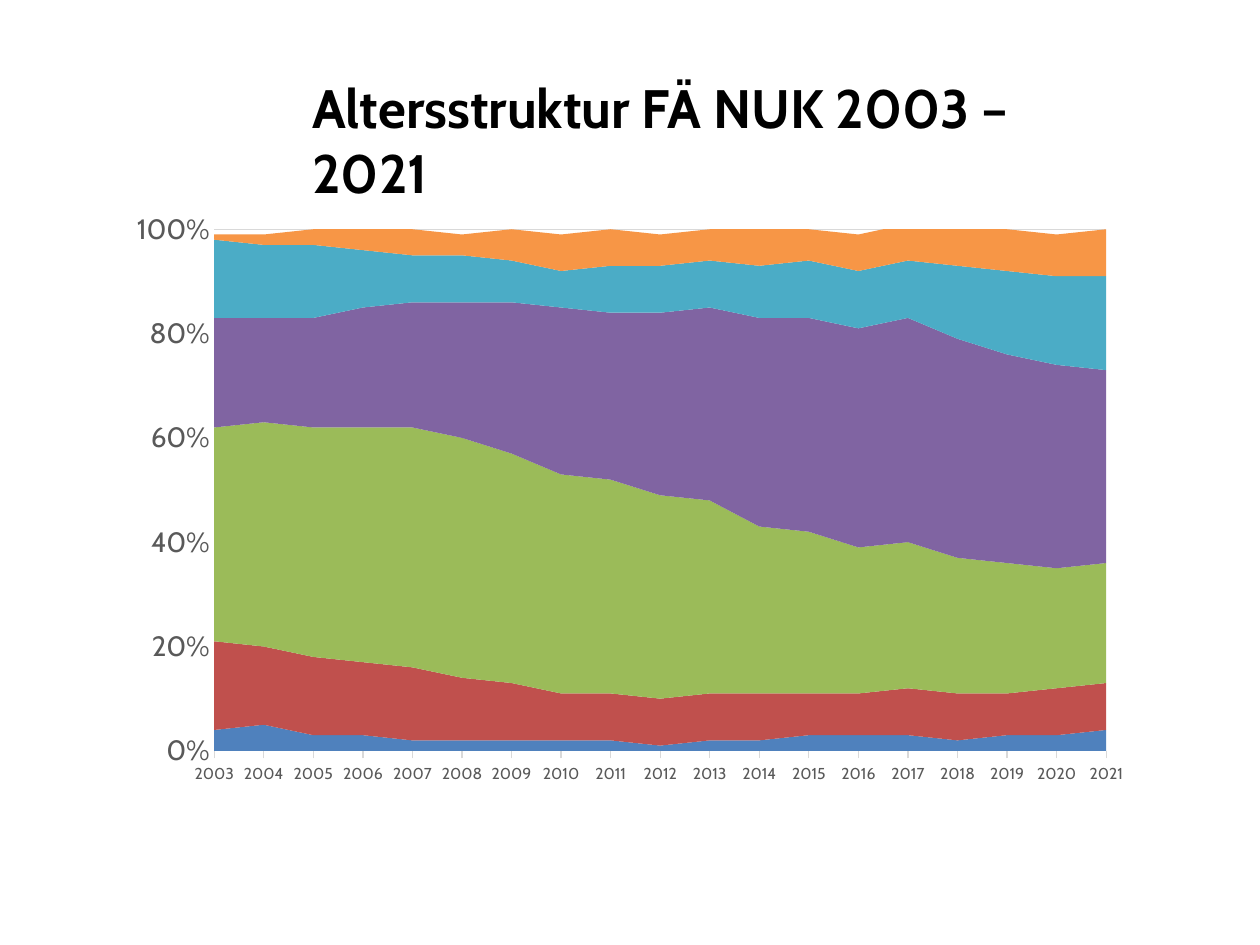
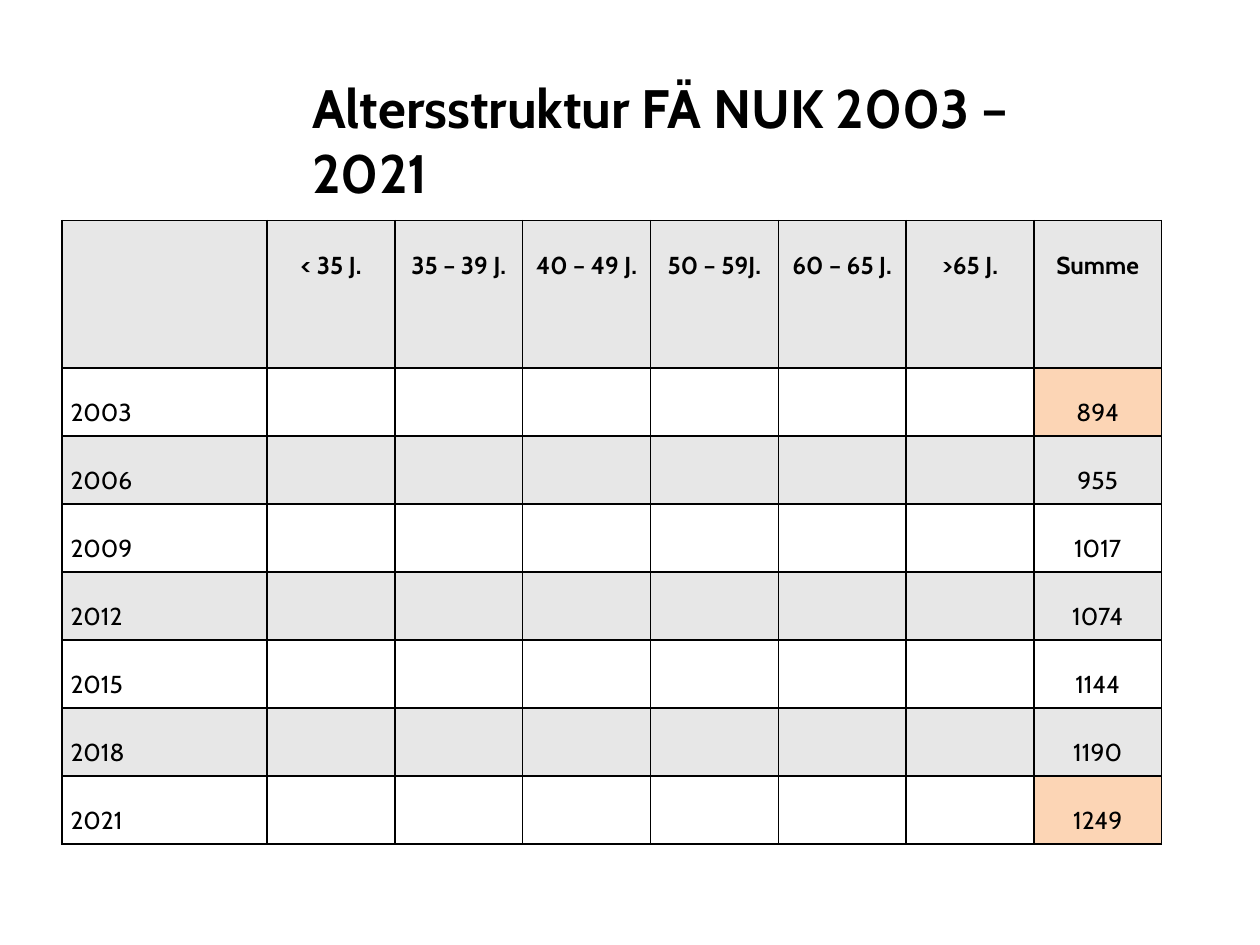
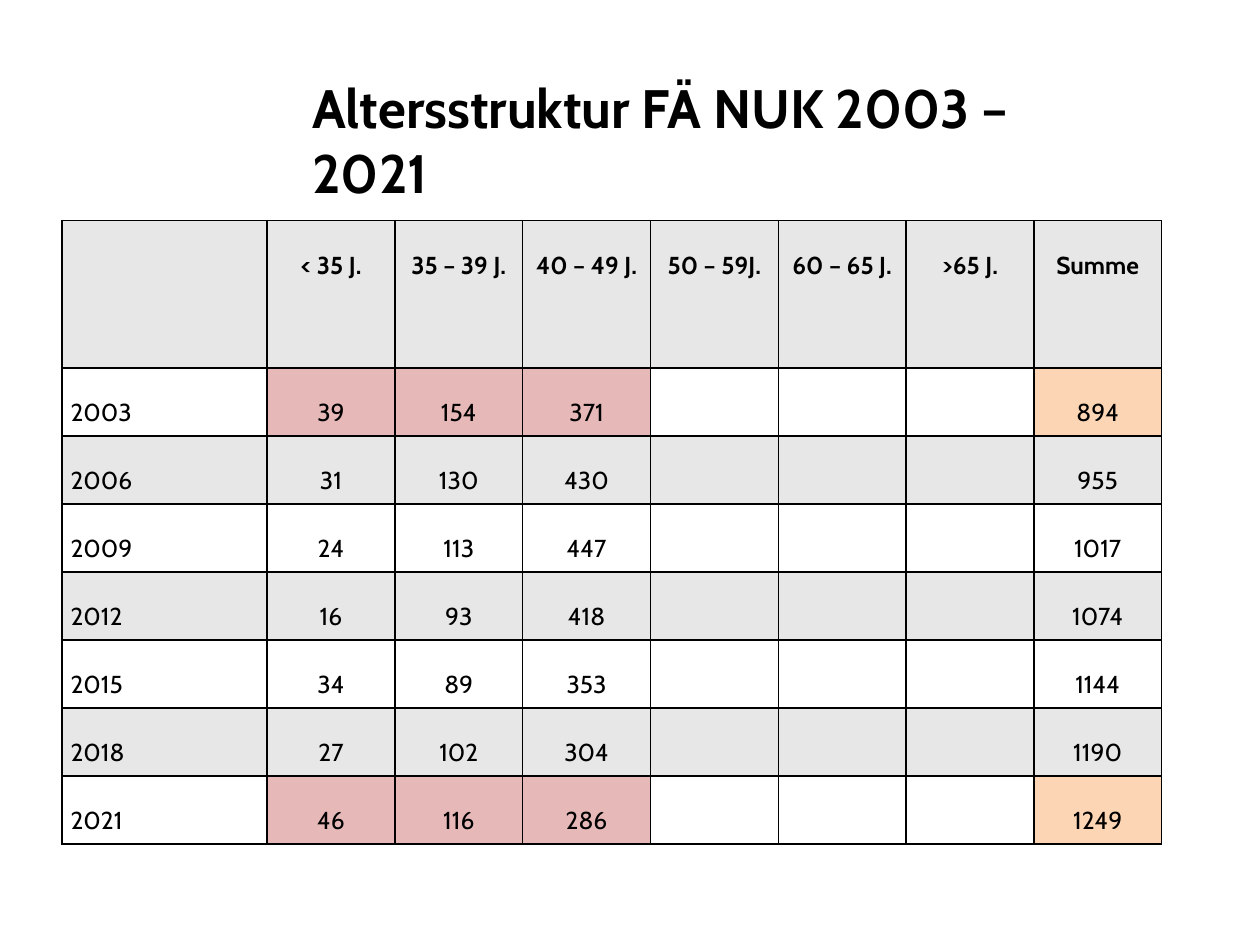
from lxml import etree
from pptx import Presentation
from pptx.chart.data import CategoryChartData
from pptx.dml.color import RGBColor
from pptx.enum.chart import XL_CHART_TYPE, XL_TICK_MARK
from pptx.enum.text import MSO_ANCHOR, MSO_AUTO_SIZE, PP_ALIGN
from pptx.oxml import parse_xml
from pptx.oxml.ns import nsdecls, qn
from pptx.util import Inches, Pt

AREA_STACKED = XL_CHART_TYPE.AREA_STACKED
TICK_NONE, TICK_OUT = XL_TICK_MARK.NONE, XL_TICK_MARK.OUTSIDE
TOP = MSO_ANCHOR.TOP
GROW = MSO_AUTO_SIZE.SHAPE_TO_FIT_TEXT
LEFT, CENTER = PP_ALIGN.LEFT, PP_ALIGN.CENTER

FONT = "Cabin"
TITLE = "Altersstruktur FÄ NUK 2003 – 2021"
COLORS = {
    "text": "000000", "axis": "595959", "grid": "D9D9D9", "white": "FFFFFF",
    "band": "E7E7E7", "young": "E6B9B8", "total": "FCD5B5",
}
AREA_COLORS = ["4F81BD", "C0504D", "9BBB59", "8064A2", "4BACC6", "F79646"]

YEARS = range(2003, 2022)
SHARES = [
    [4, 5, 3, 3, 2, 2, 2, 2, 2, 1, 2, 2, 3, 3, 3, 2, 3, 3, 4],
    [17, 15, 15, 14, 14, 12, 11, 9, 9, 9, 9, 9, 8, 8, 9, 9, 8, 9, 9],
    [41, 43, 44, 45, 46, 46, 44, 42, 41, 39, 37, 32, 31, 28, 28, 26, 25, 23, 23],
    [21, 20, 21, 23, 24, 26, 29, 32, 32, 35, 37, 40, 41, 42, 43, 42, 40, 39, 37],
    [15, 14, 14, 11, 9, 9, 8, 7, 9, 9, 9, 10, 11, 11, 11, 14, 16, 17, 18],
    [1, 2, 3, 4, 5, 4, 6, 7, 7, 6, 6, 7, 6, 7, 7, 7, 8, 8, 9],
]
CHART_BOX = (0.93, 1.6, 8.15, 4.72)
PLOT_BOX = (1.7, 1.82, 7.08, 4.14)

AGE_GROUPS = ["< 35 J.", "35 – 39 J.", "40 – 49 J.", "50 – 59J.", "60 – 65 J.", ">65 J."]
HEADER = ["", *AGE_GROUPS, "Summe"]
COUNTS = {
    2003: ([39, 154, 371], 894),
    2006: ([31, 130, 430], 955),
    2009: ([24, 113, 447], 1017),
    2012: ([16, 93, 418], 1074),
    2015: ([34, 89, 353], 1144),
    2018: ([27, 102, 304], 1190),
    2021: ([46, 116, 286], 1249),
}
COMPARED_YEARS = (min(COUNTS), max(COUNTS))
TABLE_BOX = (0.49, 1.75, 8.73, 4.96)
YEAR_WIDTH, HEADER_HEIGHT, ROW_HEIGHT = 1.63, 1.17, 0.54


def rgb(name):
    """Return the palette colour of that name."""
    return RGBColor.from_string(COLORS[name])


def set_attrs(target, values):
    """Set each named attribute on the target."""
    for name, value in values.items():
        setattr(target, name, value)


def format_font(font, size, color="text", bold=False):
    """Give a font the deck's typeface with a size, colour and weight."""
    set_attrs(font, {"name": FONT, "size": Pt(size), "bold": bold})
    font.color.rgb = rgb(color)


def add_titled_slide(prs):
    """Add a slide with the shared title."""
    s = prs.slides.add_slide(prs.slide_layouts[5])
    title = s.shapes.title
    set_attrs(title, {"left": Inches(2.38), "top": Inches(0.54),
                      "width": Inches(6.56), "height": Inches(0.62)})
    tf = title.text_frame
    set_attrs(tf, {"text": TITLE, "word_wrap": True, "auto_size": GROW,
                   "vertical_anchor": TOP})
    p = tf.paragraphs[0]
    p.alignment = LEFT
    format_font(p.runs[0].font, 30.9, bold=True)
    return s


def set_plot_area(chart):
    """Place the inner plot area within the chart frame."""
    x, y, w, h = CHART_BOX
    left, top, width, height = PLOT_BOX
    plot_area = chart.element.find(".//" + qn("c:plotArea"))
    for old in plot_area.findall(qn("c:layout")):
        plot_area.remove(old)
    layout = parse_xml(f"<c:layout {nsdecls('c')}><c:manualLayout/></c:layout>")
    values = {
        "layoutTarget": "inner", "xMode": "edge", "yMode": "edge",
        "x": (left - x) / w, "y": (top - y) / h, "w": width / w, "h": height / h,
    }
    for tag, value in values.items():
        etree.SubElement(layout[0], qn(f"c:{tag}")).set("val", str(value))
    plot_area.insert(0, layout)


def format_line(line, color, width):
    """Give a line a colour and a width."""
    line.color.rgb = rgb(color)
    line.width = Pt(width)


def add_share_chart(s):
    """Add the stacked area chart of age shares by year."""
    data = CategoryChartData(number_format="0%")
    data.categories = [str(year) for year in YEARS]
    for number, shares in enumerate(SHARES, 1):
        data.add_series(f"Series {number}", [share / 100 for share in shares])
    frame = s.shapes.add_chart(AREA_STACKED, *map(Inches, CHART_BOX), data)
    chart = frame.chart
    set_attrs(chart, {"has_legend": False, "has_title": False})
    format_font(chart.font, 16)
    plot = chart.plots[0]
    plot.vary_by_categories = False
    for series, color in zip(plot.series, AREA_COLORS):
        series.format.fill.solid()
        series.format.fill.fore_color.rgb = RGBColor.from_string(color)
        series.format.line.fill.background()

    years, shares = chart.category_axis, chart.value_axis
    set_attrs(years, {"major_tick_mark": TICK_OUT, "minor_tick_mark": TICK_NONE,
                      "has_major_gridlines": False})
    set_attrs(shares, {"major_tick_mark": TICK_NONE, "minor_tick_mark": TICK_NONE,
                       "minimum_scale": 0, "maximum_scale": 1, "major_unit": 0.2,
                       "has_major_gridlines": True})
    set_attrs(shares.tick_labels, {"number_format": "0%", "number_format_is_linked": False})
    format_font(years.tick_labels.font, 9, "axis")
    format_font(shares.tick_labels.font, 16, "axis")
    format_line(years.format.line, "grid", 0.75)
    format_line(shares.major_gridlines.format.line, "grid", 0.75)
    shares.format.line.fill.background()
    set_plot_area(chart)


def add_borders(cell):
    """Draw a thin line on all four sides of a cell."""
    tc_pr = cell._tc.get_or_add_tcPr()
    for side in ("lnL", "lnR", "lnT", "lnB"):
        tc_pr.append(parse_xml(
            f'<a:{side} {nsdecls("a")} w="{Pt(1)}"><a:solidFill>'
            f'<a:srgbClr val="{COLORS["text"]}"/></a:solidFill></a:{side}>'))


def format_cell(cell, text, fill, alignment=CENTER, bold=False):
    """Fill, frame and label one table cell."""
    set_attrs(cell, {"margin_left": Inches(0.07), "margin_right": Inches(0.07),
                     "margin_top": 0, "margin_bottom": 0, "vertical_anchor": TOP})
    add_borders(cell)
    cell.fill.solid()
    cell.fill.fore_color.rgb = rgb(fill)
    if text:
        p = cell.text_frame.paragraphs[0]
        set_attrs(p, {"alignment": alignment, "line_spacing": 2.0})
        r = p.add_run()
        r.text = text
        format_font(r.font, 14, bold=bold)


def add_count_table(s, shown):
    """Add the table of counts with the first age groups filled in."""
    columns = len(HEADER)
    table = s.shapes.add_table(len(COUNTS) + 1, columns, *map(Inches, TABLE_BOX)).table
    set_attrs(table, {"first_row": False, "horz_banding": False})
    group_width = (TABLE_BOX[2] - YEAR_WIDTH) / (columns - 1)
    for i, column in enumerate(table.columns):
        column.width = Inches(group_width if i else YEAR_WIDTH)
    for i, row in enumerate(table.rows):
        row.height = Inches(ROW_HEIGHT if i else HEADER_HEIGHT)

    for i, label in enumerate(HEADER):
        format_cell(table.cell(0, i), label, "band", bold=True)
    for i, (year, (groups, total)) in enumerate(COUNTS.items(), 1):
        blanks = [""] * (len(AGE_GROUPS) - shown)
        values = [year, *groups[:shown], *blanks, total]
        fills = ["white" if i % 2 else "band"] * columns
        if year in COMPARED_YEARS:
            fills[1:shown + 1] = ["young"] * shown
            fills[-1] = "total"
        for j, (value, fill) in enumerate(zip(values, fills)):
            format_cell(table.cell(i, j), str(value), fill, CENTER if j else LEFT)


def main():
    """Build the three slides and save them."""
    prs = Presentation()
    prs.slide_width, prs.slide_height = Inches(10), Inches(7.5)
    add_share_chart(add_titled_slide(prs))
    for shown in (0, 3):
        add_count_table(add_titled_slide(prs), shown)
    prs.save("out.pptx")


if __name__ == "__main__":
    main()
